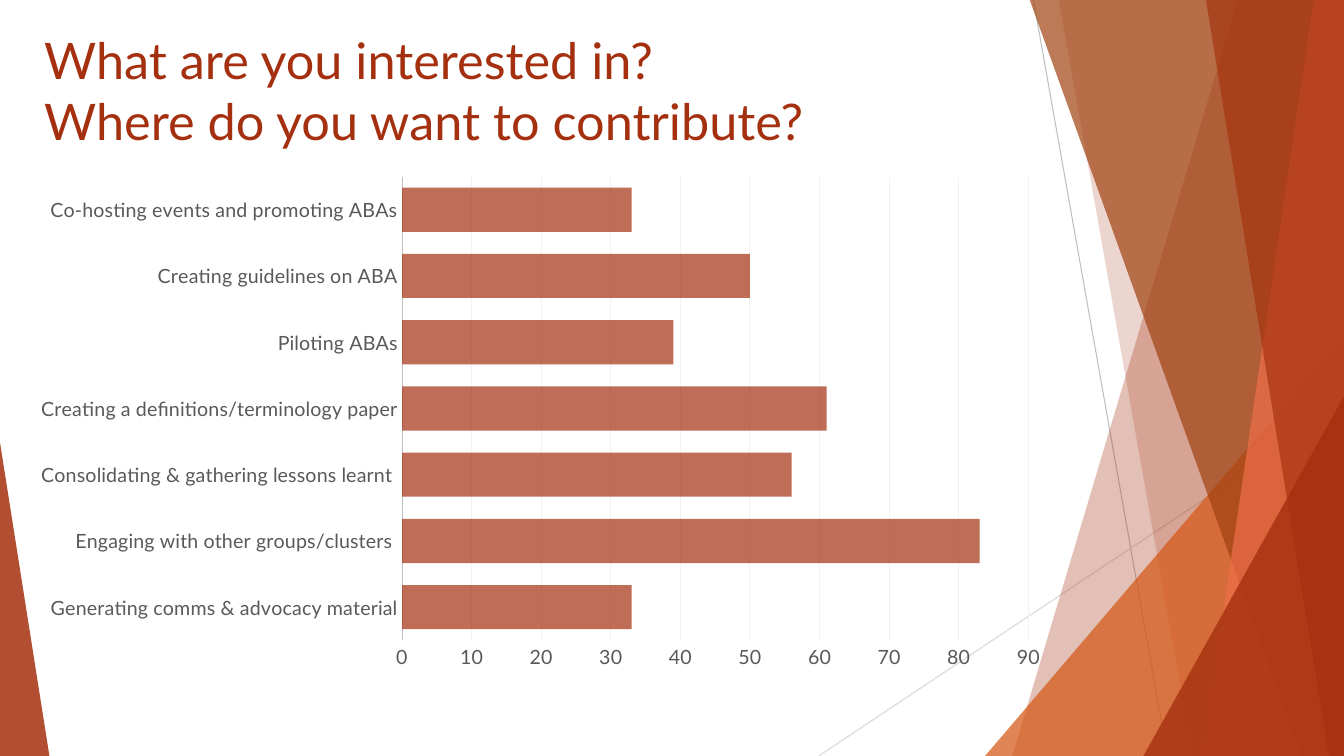
from pptx import Presentation
from pptx.chart.data import CategoryChartData
from pptx.dml.color import RGBColor
from pptx.enum.chart import XL_CHART_TYPE, XL_TICK_MARK
from pptx.enum.shapes import MSO_CONNECTOR, MSO_SHAPE
from pptx.enum.text import MSO_ANCHOR
from pptx.oxml import parse_xml
from pptx.oxml.ns import nsdecls, qn
from pptx.util import Pt

PX = 9144  # 100 px to the inch
WIDTH, HEIGHT = 1333, 750
FONT = "Lato"

RUST = RGBColor(0xA5, 0x30, 0x0F)
ORANGE = RGBColor(0xD5, 0x58, 0x16)
BROWN = RGBColor(0xA0, 0x42, 0x10)
CORAL = RGBColor(0xEE, 0x6E, 0x4A)
LABEL_GREY = RGBColor(0x59, 0x59, 0x59)
AXIS_GREY = RGBColor(0xBF, 0xBF, 0xBF)
RAY_GREY = RGBColor(0xD9, 0xD9, 0xD9)
GRID_GREY = RGBColor(0xF2, 0xF2, 0xF2)

TITLE = "What are you interested in?\vWhere do you want to contribute?"
TITLE_BOX = (34, 24, 940, 144)

INTERESTS = [
    ("Generating comms & advocacy material", 33),
    ("Engaging with other groups/clusters ", 83),
    ("Consolidating & gathering lessons learnt ", 56),
    ("Creating a definitions/terminology paper", 61),
    ("Piloting ABAs", 39),
    ("Creating guidelines on ABA", 50),
    ("Co-hosting events and promoting ABAs", 33),
]
CHART_BOX = (20, 164, 1032, 509)
PLOT_BOX = (399, 175, 621, 460)
BAR_OPACITY = 70

# from x, from y, to x, to y, colour
RAYS = [
    (1025, 0, 1158, HEIGHT, AXIS_GREY),
    (WIDTH, 403, 812, HEIGHT, RAY_GREY),
]
# Bands reach the right edge: ("band", top x, bottom x, colour, opacity)
# Triangles stand on the bottom edge: ("triangle", left, top, width, apex, colour, opacity)
FACETS = [
    ("band", 1228, 1004, RUST, 30),
    ("band", 1050, 1183, RUST, 20),
    ("triangle", 977, 333, 356, 1, ORANGE, 72),
    ("band", 1021, 1291, BROWN, 70),
    ("band", 1303, 1192, CORAL, 70),
    ("band", 1196, 1318, RUST, 65),
    ("triangle", 1134, 393, 199, 1, RUST, 80),
    ("triangle", 0, 439, 49, 0, RUST, 85),
]


def emu(box):
    return [length * PX for length in box]


def set_opacity(colours, percent):
    for colour in colours:
        colour.append(parse_xml(f'<a:alpha {nsdecls("a")} val="{percent * 1000}"/>'))


def add_ray(slide, x1, y1, x2, y2, colour):
    ray = slide.shapes.add_connector(MSO_CONNECTOR.STRAIGHT, *emu((x1, y1, x2, y2)))
    ray.line.color.rgb = colour
    ray.line.width = Pt(0.75)
    ray.element.spPr.append(parse_xml(f'<a:effectLst {nsdecls("a")}/>'))


def add_facet(slide, kind, *geometry, colour, opacity):
    if kind == "band":
        top_x, bottom_x = geometry
        outline = slide.shapes.build_freeform(top_x, -1, scale=PX)
        outline.add_line_segments([(WIDTH, -1), (WIDTH, HEIGHT), (bottom_x, HEIGHT)], close=True)
        facet = outline.convert_to_shape()
    else:
        left, top, width, apex = geometry
        facet = slide.shapes.add_shape(
            MSO_SHAPE.ISOSCELES_TRIANGLE, *emu((left, top, width, HEIGHT - top)))
        facet.adjustments[0] = apex
    facet.shadow.inherit = False
    facet.line.fill.background()
    facet.fill.solid()
    facet.fill.fore_color.rgb = colour
    set_opacity(facet.element.spPr.xpath("./a:solidFill/a:srgbClr"), opacity)


def add_title(slide):
    title = slide.shapes.add_textbox(*emu(TITLE_BOX)).text_frame
    title.word_wrap = True
    title.vertical_anchor = MSO_ANCHOR.TOP
    title.text = TITLE
    for run in title.paragraphs[0].runs:
        run.font.name = FONT
        run.font.size = Pt(36)
        run.font.color.rgb = RUST


def place_plot(chart):
    """Fix the inner plot area at PLOT_BOX inside the chart frame."""
    left, top, width, height = CHART_BOX
    plot_left, plot_top, plot_width, plot_height = PLOT_BOX
    shares = {
        "x": (plot_left - left) / width,
        "y": (plot_top - top) / height,
        "w": plot_width / width,
        "h": plot_height / height,
    }
    modes = "".join(f'<c:{side}Mode val="edge"/>' for side in "xy")
    values = "".join(f'<c:{side} val="{share:.3f}"/>' for side, share in shares.items())
    plot_area = chart.element.xpath(".//c:plotArea")[0]
    for layout in plot_area.findall(qn("c:layout")):
        plot_area.remove(layout)
    plot_area.insert(0, parse_xml(
        f'<c:layout {nsdecls("c")}><c:manualLayout><c:layoutTarget val="inner"/>'
        f'{modes}{values}</c:manualLayout></c:layout>'))


def add_interest_chart(slide):
    interests = CategoryChartData()
    interests.categories = [label for label, _ in INTERESTS]
    interests.add_series("Series 1", [votes for _, votes in INTERESTS])
    chart = slide.shapes.add_chart(
        XL_CHART_TYPE.BAR_STACKED, *emu(CHART_BOX), interests).chart
    chart.has_legend = False
    chart.has_title = False
    chart.font.name = FONT
    chart.font.size = Pt(14)

    bars = chart.plots[0]
    bars.gap_width = 50
    bars.overlap = 100
    bars.vary_by_categories = False
    bar_fill = bars.series[0].format.fill
    bar_fill.solid()
    bar_fill.fore_color.rgb = RUST
    set_opacity(chart.element.xpath(".//c:ser/c:spPr/a:solidFill/a:srgbClr"), BAR_OPACITY)

    for axis in (chart.category_axis, chart.value_axis):
        axis.major_tick_mark = XL_TICK_MARK.NONE
        axis.minor_tick_mark = XL_TICK_MARK.NONE
        axis.tick_labels.font.name = FONT
        axis.tick_labels.font.size = Pt(14)
        axis.tick_labels.font.color.rgb = LABEL_GREY

    chart.category_axis.has_major_gridlines = False
    votes_axis = chart.value_axis
    votes_axis.minimum_scale, votes_axis.maximum_scale = 0, 90
    votes_axis.major_unit = 10
    votes_axis.has_major_gridlines = True
    votes_axis.format.line.fill.background()
    for line, colour in ((chart.category_axis.format.line, AXIS_GREY),
                         (votes_axis.major_gridlines.format.line, GRID_GREY)):
        line.color.rgb = colour
        line.width = Pt(0.75)
    place_plot(chart)


def main():
    deck = Presentation()
    deck.slide_width, deck.slide_height = emu((WIDTH, HEIGHT))
    slide = deck.slides.add_slide(deck.slide_layouts[6])
    for ray in RAYS:
        add_ray(slide, *ray)
    for *facet, colour, opacity in FACETS:
        add_facet(slide, *facet, colour=colour, opacity=opacity)
    add_title(slide)
    add_interest_chart(slide)
    deck.save("out.pptx")


if __name__ == "__main__":
    main()
